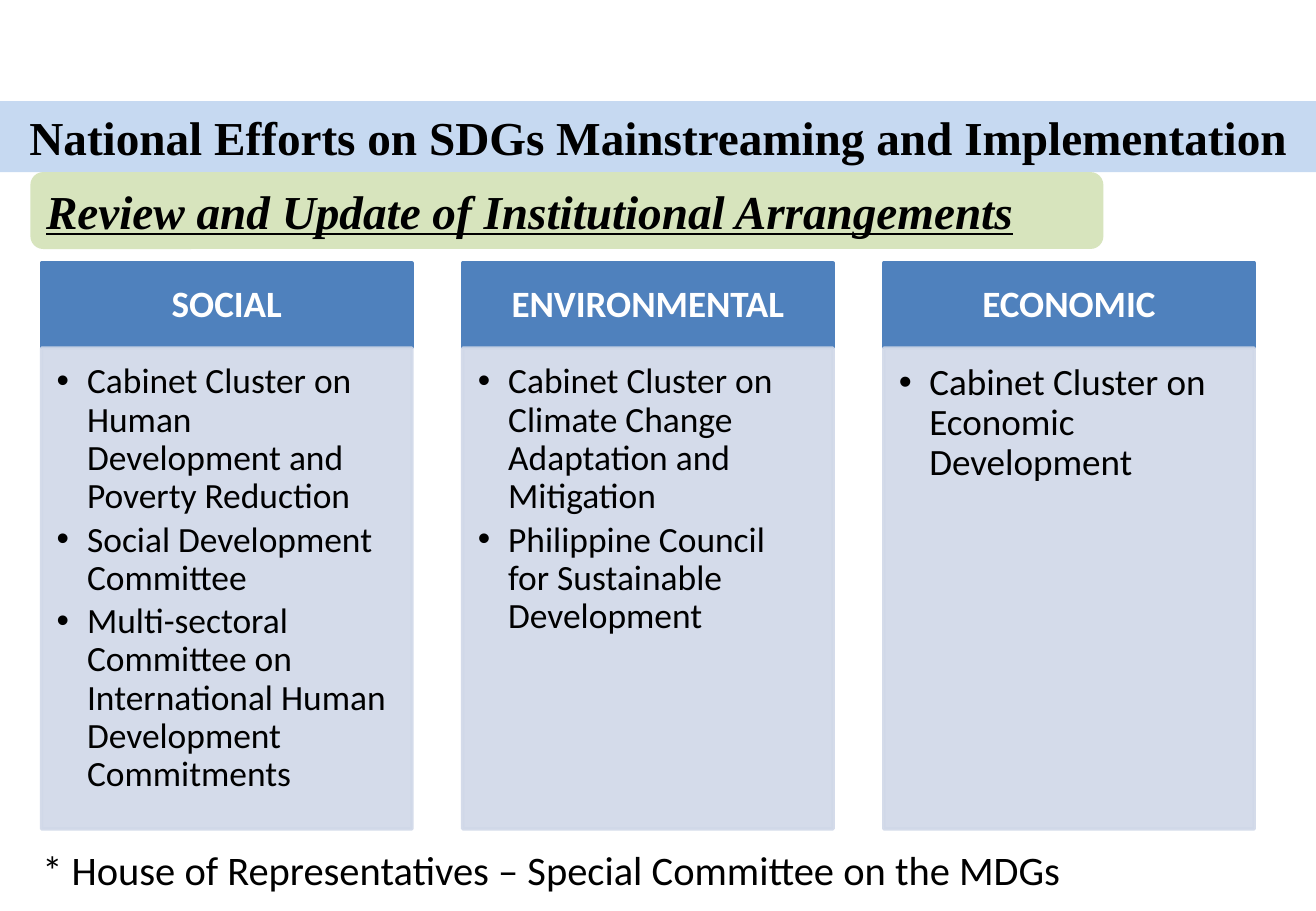
"""Builds the slide on institutional arrangements for the SDGs."""
from dataclasses import dataclass

from lxml import etree
from pptx import Presentation, util as u
from pptx.dml.color import RGBColor
from pptx.enum import shapes, text
from pptx.oxml.ns import qn

TITLE = "National Efforts on SDGs Mainstreaming and Implementation"
SUBTITLE = "Review and Update of Institutional Arrangements"
PILLARS = [
    ("SOCIAL", 21, [
        "Cabinet Cluster on Human Development and Poverty Reduction",
        "Social Development Committee",
        "Multi-sectoral Committee on International Human Development Commitments",
    ]),
    ("ENVIRONMENTAL", 21, [
        "Cabinet Cluster on Climate Change Adaptation and Mitigation",
        "Philippine Council for Sustainable Development",
    ]),
    ("ECONOMIC", 22, ["Cabinet Cluster on Economic Development"]),
]
FOOTNOTE = "* House of Representatives – Special Committee on the MDGs"


@dataclass(frozen=True)
class Theme:
    """Colours, fonts and type sizes."""
    title_band: str = "C6D9F1"
    subtitle_band: str = "D7E4BD"
    header: str = "4F81BD"
    panel: str = "D0D8E8"
    ink: str = "000000"
    light: str = "FFFFFF"
    serif: str = "Times New Roman"
    sans: str = "Calibri"
    heading_size: int = 28
    header_size: int = 22
    footnote_size: int = 24


THEME = Theme()
PX = 7620
SLIDE_W, SLIDE_H = 1300, 900
COLUMN_LEFT, COLUMN_PITCH, COLUMN_W = 41, 416, 366
HEADER_TOP, HEADER_H = 260, 83
PANEL_TOP, PANEL_H = 344, 475
BULLET_INDENT, FOOTNOTE_INDENT = 30, 45


def px(length):
    """Turns px into EMU."""
    return u.Emu(length * PX)


def box(*rect):
    """Turns a px rectangle into EMU."""
    return [px(side) for side in rect]


def paint(shape, color, line=False, alpha=None):
    """Gives a shape its fill, and a line of the same colour or none."""
    shape.fill.solid()
    shape.fill.fore_color.rgb = RGBColor.from_string(color)
    if line:
        shape.line.color.rgb = RGBColor.from_string(color)
        shape.line.width = u.Pt(2)
    else:
        shape.line.fill.background()
    if alpha:
        for tint in shape._element.spPr.iter(qn("a:srgbClr")):
            etree.SubElement(tint, qn("a:alpha"), val=str(alpha * 1000))


def frame_text(shape, anchor, insets=(12, 6, 12, 6)):
    """Sets wrapping, anchor and insets, and returns the text frame."""
    frame = shape.text_frame
    frame.word_wrap = True
    frame.auto_size = text.MSO_AUTO_SIZE.NONE
    frame.vertical_anchor = anchor
    (frame.margin_left, frame.margin_top,
     frame.margin_right, frame.margin_bottom) = box(*insets)
    return frame


def write(paragraph, words, font, size, color, align=text.PP_ALIGN.LEFT, **style):
    """Adds one formatted run to a paragraph."""
    paragraph.alignment = align
    run = paragraph.add_run()
    run.text = words
    run.font.name = font
    run.font.size = u.Pt(size)
    run.font.color.rgb = RGBColor.from_string(color)
    for name, value in style.items():
        setattr(run.font, name, value)


def hang(paragraph, indent, bullet=None):
    """Gives a paragraph a hanging indent and, if asked, a bullet."""
    props = paragraph._p.get_or_add_pPr()
    props.set("marL", str(px(indent)))
    props.set("indent", str(-px(indent)))
    if bullet:
        etree.SubElement(props, qn("a:buFont"), typeface="Arial")
        etree.SubElement(props, qn("a:buChar"), char=bullet)


def add_block(slide, kind, rect, color, **look):
    """Adds a painted preset shape without a shadow."""
    block = slide.shapes.add_shape(kind, *box(*rect))
    block.shadow.inherit = False
    paint(block, color, **look)
    return block


def add_pillar(slide, left, name, size, bodies):
    """Adds one column: a header and its bulleted panel."""
    rectangle = shapes.MSO_SHAPE.RECTANGLE
    header = add_block(slide, rectangle, (left, HEADER_TOP, COLUMN_W, HEADER_H),
                       THEME.header, line=True)
    frame = frame_text(header, text.MSO_ANCHOR.MIDDLE, (20, 12, 20, 12))
    frame.paragraphs[0].line_spacing = 0.9
    write(frame.paragraphs[0], name, THEME.sans, THEME.header_size, THEME.light,
          text.PP_ALIGN.CENTER, bold=True)

    panel = add_block(slide, rectangle, (left, PANEL_TOP, COLUMN_W, PANEL_H),
                      THEME.panel, line=True, alpha=90)
    frame = frame_text(panel, text.MSO_ANCHOR.TOP, (15, 15, 19, 22))
    for index, body in enumerate(bodies):
        item = frame.add_paragraph() if index else frame.paragraphs[0]
        hang(item, BULLET_INDENT, "•")
        item.level = 1
        item.line_spacing = 0.9
        item.space_after = u.Pt(3)
        write(item, body, THEME.sans, size, THEME.ink)


def main():
    """Builds and saves the slide."""
    deck = Presentation()
    deck.slide_width, deck.slide_height = box(SLIDE_W, SLIDE_H)
    slide = deck.slides.add_slide(deck.slide_layouts[5])

    title = slide.shapes.title
    title.left, title.top, title.width, title.height = box(0, 100, SLIDE_W, 70)
    paint(title, THEME.title_band)
    frame = frame_text(title, text.MSO_ANCHOR.MIDDLE)
    write(frame.paragraphs[0], TITLE, THEME.serif, THEME.heading_size, THEME.ink,
          text.PP_ALIGN.CENTER, bold=True)

    subtitle = add_block(slide, shapes.MSO_SHAPE.ROUNDED_RECTANGLE,
                         (30, 170, 1060, 76), THEME.subtitle_band)
    frame = frame_text(subtitle, text.MSO_ANCHOR.TOP)
    write(frame.paragraphs[0], SUBTITLE, THEME.serif, THEME.heading_size, THEME.ink,
          bold=True, italic=True, underline=True)

    for index, pillar in enumerate(PILLARS):
        add_pillar(slide, COLUMN_LEFT + index * COLUMN_PITCH, *pillar)

    footnote = slide.shapes.add_textbox(*box(30, 829, 1110, 60))
    frame = frame_text(footnote, text.MSO_ANCHOR.TOP)
    hang(frame.paragraphs[0], FOOTNOTE_INDENT)
    write(frame.paragraphs[0], FOOTNOTE, THEME.sans, THEME.footnote_size, THEME.ink)

    deck.save("out.pptx")


if __name__ == "__main__":
    main()
